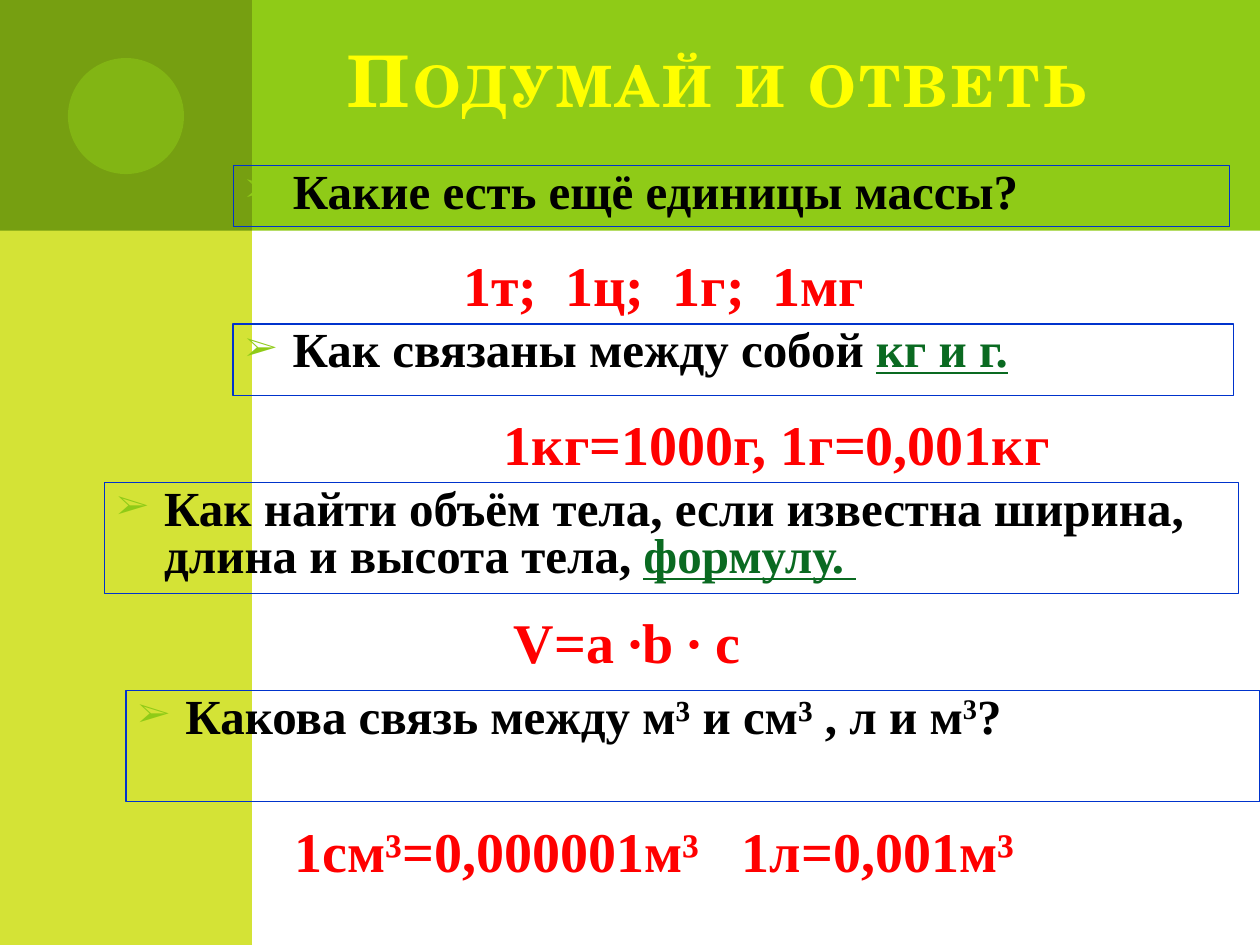
from lxml import etree
from pptx import Presentation
from pptx import util as u
from pptx.dml import color
from pptx.enum import shapes, text
from pptx.oxml import ns

LIME, DARK_LIME, YELLOW_GREEN = "8FCB17", "769F11", "D4E336"
YELLOW, BLACK, RED, GREEN, BLUE = "FFFF00", "000000", "FF0000", "0A6A21", "0033CC"

TITLE_FONT = {"name": "TeX Gyre Schola", "size": u.Pt(40.7), "bold": True}
QUESTION_FONT = {"name": "Times New Roman", "size": u.Pt(28), "bold": True}
ANSWER_FONT = {**QUESTION_FONT, "size": u.Pt(32)}
LINK = {"color": GREEN, "underline": True}
SPACE_WIDTH = 8  # points, a space in the answer font


def rgb(hex_value):
    return color.RGBColor.from_string(hex_value)


def add_xml(parent, tag, **attributes):
    return etree.SubElement(parent, ns.qn(tag), attributes)


def apply(target, values):
    for name, value in values.items():
        setattr(target, name, value)


def place(shape, box):
    apply(shape, dict(zip(("left", "top", "width", "height"), map(u.Cm, box))))


class SlideBuilder:
    def __init__(self, slide):
        self.slide = slide

    def to_front(self, shape):
        self.slide.shapes._spTree.append(shape._element)

    def add_words(self, paragraph, words, font, hex_color, **extra):
        """Add a run; spc, cap and baseline in extra are run attributes."""
        run = paragraph.add_run()
        run.text = words
        apply(run.font, font)
        run.font.color.rgb = rgb(extra.pop("color", hex_color))
        run.font.underline = extra.pop("underline", None)
        for name, value in extra.items():
            run._r.get_or_add_rPr().set(name, str(value))

    def block(self, kind, box, fill, opacity=None):
        block = self.slide.shapes.add_shape(kind, *map(u.Cm, box))
        block.shadow.inherit = False
        block.line.fill.background()
        block.fill.solid()
        block.fill.fore_color.rgb = rgb(fill)
        if opacity:
            tint = block._element.spPr.find(".//" + ns.qn("a:srgbClr"))
            add_xml(tint, "a:alpha", val=str(opacity * 1000))

    def title(self, words, box):
        heading = self.slide.shapes.title
        place(heading, box)
        self.to_front(heading)
        apply(heading.text_frame, {"vertical_anchor": text.MSO_ANCHOR.MIDDLE,
                                   "auto_size": text.MSO_AUTO_SIZE.NONE})
        paragraph = heading.text_frame.paragraphs[0]
        paragraph.alignment = text.PP_ALIGN.CENTER
        self.add_words(paragraph, words, TITLE_FONT, YELLOW, cap="small", spc=200)

    def question(self, parts, box, placeholder=None):
        if placeholder is None:
            frame = self.slide.shapes.add_shape(
                shapes.MSO_SHAPE.RECTANGLE, *map(u.Cm, box))
            frame.shadow.inherit = False
        else:
            frame = placeholder
            place(frame, box)
            self.to_front(frame)
        frame.fill.background()
        frame.line.color.rgb = rgb(BLUE)
        frame.line.width = u.Pt(0.75)
        apply(frame.text_frame, {"word_wrap": True,
                                 "auto_size": text.MSO_AUTO_SIZE.NONE,
                                 "vertical_anchor": text.MSO_ANCHOR.TOP})
        paragraph = frame.text_frame.paragraphs[0]
        apply(paragraph, {"alignment": text.PP_ALIGN.LEFT, "line_spacing": 0.8})
        self.bullet(paragraph)
        for words, extra in parts:
            self.add_words(paragraph, words, QUESTION_FONT, BLACK, **extra)

    def bullet(self, paragraph):
        properties = paragraph._p.get_or_add_pPr()
        indent = u.Cm(0.95)
        properties.set("marL", str(int(indent)))
        properties.set("indent", str(-int(indent)))
        add_xml(add_xml(properties, "a:spcBef"), "a:spcPct", val="20000")
        add_xml(add_xml(properties, "a:buClr"), "a:srgbClr", val=LIME)
        add_xml(properties, "a:buSzPct", val="70000")
        add_xml(properties, "a:buFont", typeface="Times New Roman")
        add_xml(properties, "a:buChar", char="➢")

    def answer(self, items, box, extra_spaces=0):
        """Set the items in one line, with widened spaces between them."""
        label = self.slide.shapes.add_textbox(*map(u.Cm, box))
        apply(label.text_frame, {"word_wrap": False,
                                 "auto_size": text.MSO_AUTO_SIZE.SHAPE_TO_FIT_TEXT})
        paragraph = label.text_frame.paragraphs[0]
        for index, item in enumerate(items):
            if index:
                self.add_words(paragraph, " ", ANSWER_FONT, RED,
                               spc=extra_spaces * SPACE_WIDTH * 100)
            self.add_words(paragraph, item, ANSWER_FONT, RED)


def main():
    deck = Presentation()
    deck.slide_width, deck.slide_height = u.Cm(25.4), u.Cm(19.05)
    slide = deck.slides.add_slide(deck.slide_layouts[1])
    builder = SlideBuilder(slide)
    first_question = slide.placeholders[1]

    side, band = 5.08, 4.65
    rectangle = shapes.MSO_SHAPE.RECTANGLE
    builder.block(rectangle, (1.27, 0, 24.13, band), LIME)
    builder.block(rectangle, (0, 0, side, 19.05), YELLOW_GREEN)
    builder.block(rectangle, (0, 0, side, band), DARK_LIME)
    builder.block(shapes.MSO_SHAPE.OVAL, (1.37, 1.17, 2.34, 2.34), LIME, opacity=50)

    builder.title("Подумай и ответь", (6.76, 0, 15.75, 3.18))

    builder.question([("Какие есть ещё единицы массы?", {})],
                     (4.7, 3.33, 20.09, 1.24), first_question)
    builder.answer(["1т;", "1ц;", "1г;", "1мг"], (9.09, 4.93, 8.94, 1.63), 1)

    builder.question([("Как связаны между собой ", {}), ("кг и г.", LINK), (" ", {})],
                     (4.7, 6.53, 20.17, 1.45))
    builder.answer(["1кг=1000г, 1г=0,001кг"], (9.91, 8.13, 11.91, 1.63))

    builder.question([("Как найти объём тела, если известна ширина, "
                       "длина и высота тела, ", {}), ("формулу. ", LINK)],
                     (2.11, 9.73, 22.86, 2.24))
    builder.answer(["V=a ∙b ∙ c"], (10.11, 12.12, 5.41, 1.63))

    builder.question([("Какова связь между м³ и см³ , л и м", {}),
                      ("3", {"baseline": 30000}), ("?", {})],
                     (2.54, 13.92, 22.86, 2.24))
    builder.answer(["1см³=0,000001м³", "1л=0,001м³"], (5.69, 16.33, 15.14, 1.63), 2)

    deck.save("out.pptx")


if __name__ == "__main__":
    main()
